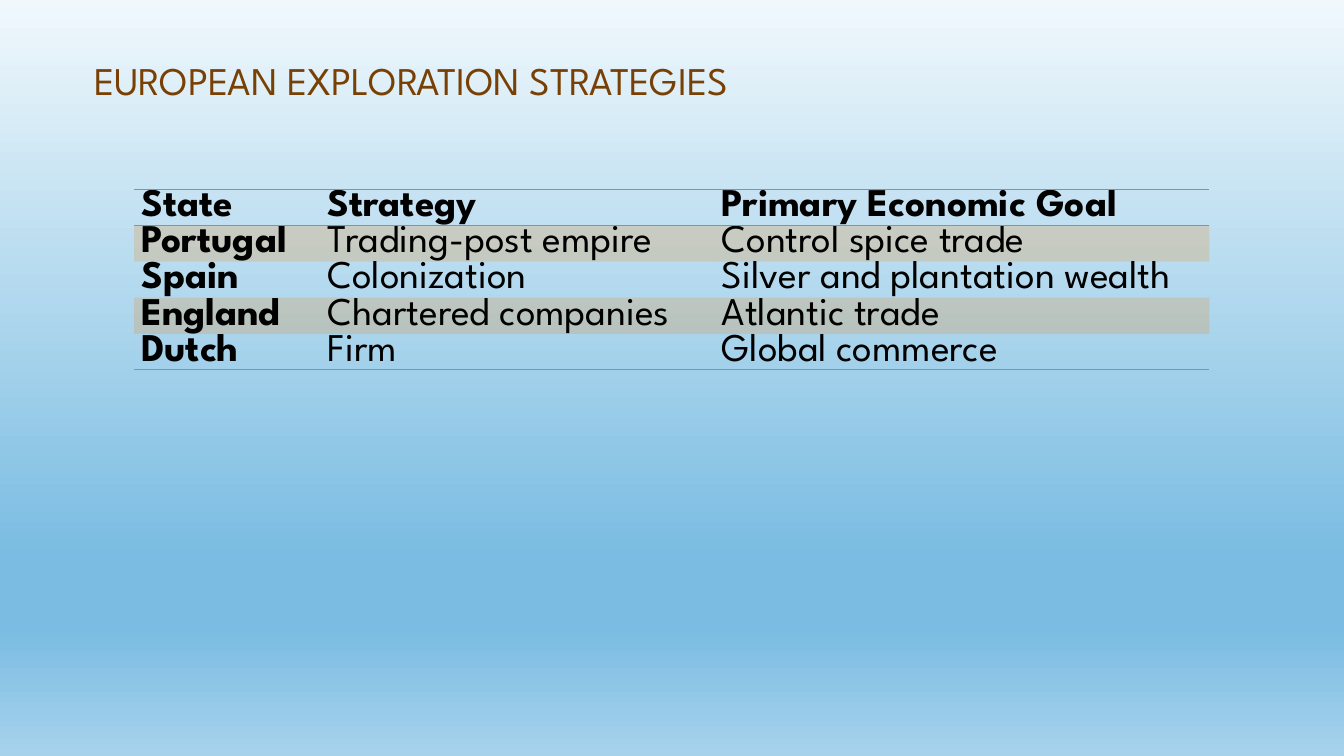
from lxml import etree
from pptx import Presentation
from pptx import util as u
from pptx.dml.color import RGBColor
from pptx.enum import text as t
from pptx.oxml.ns import qn

TITLE = "EUROPEAN EXPLORATION STRATEGIES"
ROWS = [
    ("State", "Strategy", "Primary Economic Goal"),
    ("Portugal", "Trading-post empire", "Control spice trade"),
    ("Spain", "Colonization", "Silver and plantation wealth"),
    ("England", "Chartered companies", "Atlantic trade"),
    ("Dutch", "Firm", "Global commerce"),
]
WIDTHS = [4.7, 9.93, 12.47]
ROW_H = 0.91

FONT = "League Spartan"
BROWN = RGBColor(0x78, 0x40, 0x04)
BLACK = RGBColor(0, 0, 0)
ORANGE = RGBColor(0xF0, 0x7F, 0x09)
RULE = RGBColor(0x78, 0x97, 0xA8)
PALE = RGBColor(0xF0, 0xF8, 0xFC)
BLUE = RGBColor(0x7A, 0xBC, 0xE2)
SKY = RGBColor(0xA7, 0xD2, 0xEC)
STOPS = [(0, PALE), (74, BLUE), (83, BLUE), (100, SKY)]
PLAIN = "{2D5ABB26-0587-4C30-8999-92F81FD0307C}"  # no style, no grid


def add(parent, tag, **attrs):
    return etree.SubElement(parent, qn(tag), {k: str(v) for k, v in attrs.items()})


def write(frame, words, color=BLACK, bold=False, size=28, gap=None):
    par = frame.paragraphs[0]
    par.alignment = t.PP_ALIGN.LEFT
    par.space_before = u.Pt(0)
    par.line_spacing = gap
    run = par.add_run()
    run.text = words
    font = run.font
    font.name, font.size, font.bold = FONT, u.Pt(size), bold
    font.color.rgb = color


def paint(slide):
    """Fill the background with the vertical blue gradient."""
    fill = slide.background.fill
    fill.gradient()
    fill.gradient_angle = 270
    stops = slide.background._cSld.find(".//" + qn("a:gsLst"))
    for old in list(stops):
        stops.remove(old)
    for pos, color in STOPS:
        add(add(stops, "a:gs", pos=pos * 1000), "a:srgbClr", val=color)


def edge(cell, side):
    line = add(cell._tc.get_or_add_tcPr(), "a:" + side, w=u.Pt(0.75))
    add(add(line, "a:solidFill"), "a:srgbClr", val=RULE)


def tint(cell):
    """Give the cell a 20 % orange fill."""
    cell.fill.solid()
    cell.fill.fore_color.rgb = ORANGE
    add(cell._tc.tcPr.find(".//" + qn("a:srgbClr")), "a:alpha", val=20000)


def build():
    deck = Presentation()
    deck.slide_width, deck.slide_height = u.Cm(33.87), u.Cm(19.05)
    slide = deck.slides.add_slide(deck.slide_layouts[5])
    paint(slide)

    title = slide.shapes.title
    title.left, title.top = u.Cm(2.12), u.Cm(1.06)
    title.width, title.height = u.Cm(29.63), u.Cm(1.69)
    frame = title.text_frame
    frame.auto_size = t.MSO_AUTO_SIZE.NONE
    frame.vertical_anchor = t.MSO_ANCHOR.BOTTOM
    write(frame, TITLE, color=BROWN, gap=0.9)

    table = slide.shapes.add_table(
        len(ROWS), len(WIDTHS), u.Cm(3.38), u.Cm(4.77),
        u.Cm(sum(WIDTHS)), u.Cm(ROW_H * len(ROWS))).table
    table._tbl.tblPr.find(qn("a:tableStyleId")).text = PLAIN
    table.horz_banding = False
    for col, width in zip(table.columns, WIDTHS):
        col.width = u.Cm(width)

    for r, row in enumerate(ROWS):
        table.rows[r].height = u.Cm(ROW_H)
        for c, words in enumerate(row):
            cell = table.cell(r, c)
            cell.margin_left = cell.margin_right = u.Cm(0.18)
            cell.margin_top = cell.margin_bottom = 0
            write(cell.text_frame, words, bold=r == 0 or c == 0)
            if r == 0:
                edge(cell, "lnT")
            if r in (0, len(ROWS) - 1):
                edge(cell, "lnB")
            if r % 2:
                tint(cell)
            else:
                cell.fill.background()

    deck.save("out.pptx")


if __name__ == "__main__":
    build()
